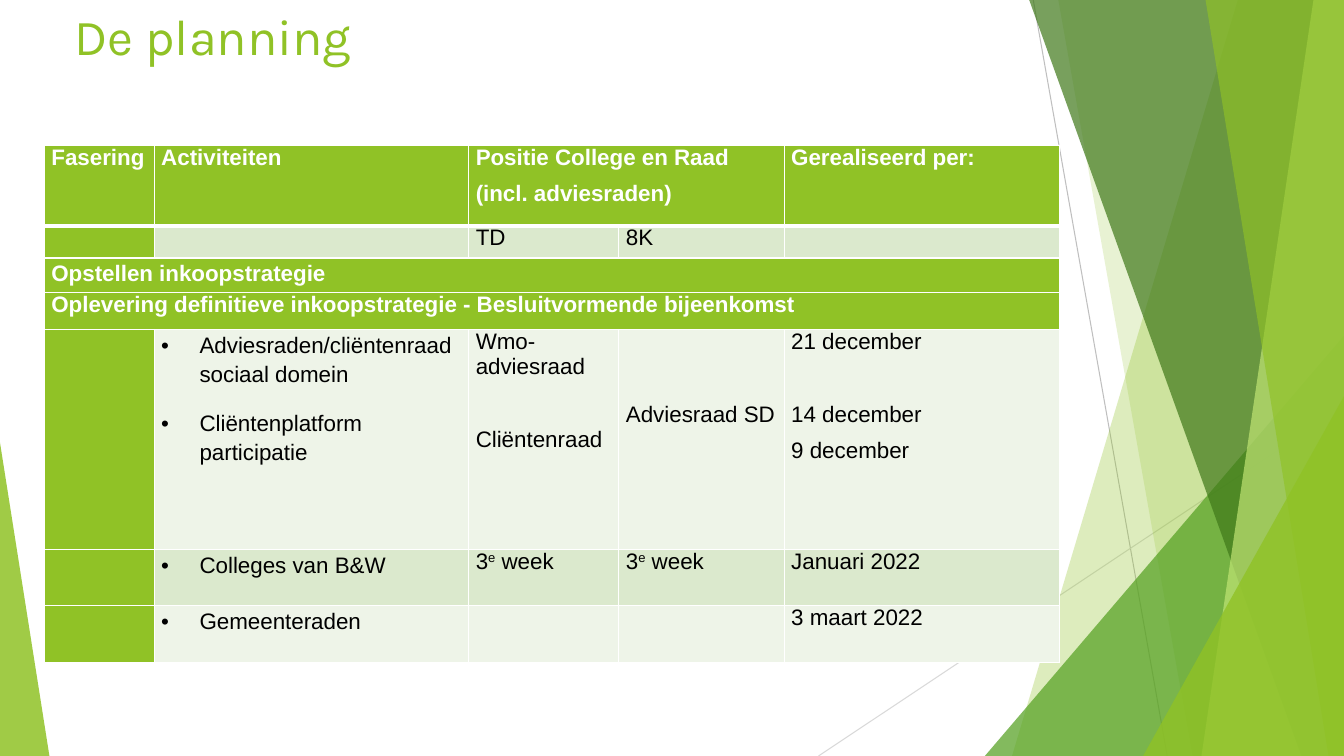
import lxml.etree
import pptx
import pptx.dml.color
import pptx.enum.shapes
import pptx.enum.text
import pptx.oxml.ns
import pptx.util

COLORS = {"lime": "90C226", "green": "54A021", "dark": "3F7819", "pale": "C0E474",
          "band": "DBE9CD", "light": "EEF4E8", "white": "FFFFFF", "black": "000000",
          "gray": "BFBFBF", "mist": "D9D9D9"}
WIDE, HIGH = pptx.util.Inches(13.333), pptx.util.Inches(7.5)
EMPTY = ()


def place(left, top, width, height):
    """Turn percentages of the slide into a box."""
    return [int(WIDE * left / 100), int(HIGH * top / 100),
            int(WIDE * width / 100), int(HIGH * height / 100)]


def color(name):
    return pptx.dml.color.RGBColor.from_string(COLORS[name])


def add(node, tag, **attrs):
    return lxml.etree.SubElement(node, pptx.oxml.ns.qn(tag), **attrs)


def paint(shape, name, alpha):
    shape.shadow.inherit = False
    shape.fill.solid()
    shape.fill.fore_color.rgb = color(name)
    shape.line.fill.background()
    tint = shape.fill._xPr.find(".//" + pptx.oxml.ns.qn("a:srgbClr"))
    add(tint, "a:alpha", val=str(alpha * 1000))


def draw_line(slide, box, start, end, name):
    left, top, width, height = box
    (x1, y1), (x2, y2) = [(int(left + width * x / 100), int(top + height * y / 100))
                          for x, y in (start, end)]
    line = slide.shapes.add_connector(
        pptx.enum.shapes.MSO_CONNECTOR.STRAIGHT, x1, y1, x2, y2)
    line.line.color.rgb = color(name)
    line.line.width = pptx.util.Pt(0.75)
    add(line._element.spPr, "a:effectLst")


def draw_shard(slide, box, high, low, name, alpha):
    """A band from two points on the left to the right edge of the box."""
    left, top, width, height = box
    right, base = left + width, top + height
    build = slide.shapes.build_freeform(int(left + width * high / 100), top)
    build.add_line_segments([(right, top), (right, base),
                             (int(left + width * low / 100), base)])
    paint(build.convert_to_shape(), name, alpha)


def draw_wedge(slide, box, left, top, width, apex, name, alpha):
    """A triangle standing on the bottom of the box."""
    x, y, wide, high = box
    shape = slide.shapes.add_shape(
        pptx.enum.shapes.MSO_SHAPE.ISOSCELES_TRIANGLE,
        int(x + wide * left / 100), int(y + high * top / 100),
        int(wide * width / 100), int(high * (100 - top) / 100))
    shape.adjustments[0] = apex
    paint(shape, name, alpha)


def draw_decor(slide, box):
    draw_line(slide, box, (76.88, 0), (86.85, 100), "gray")
    draw_line(slide, box, (100, 53.73), (60.9, 100), "mist")
    draw_shard(slide, box, 92.1, 75.3, "lime", 30)
    draw_shard(slide, box, 78.75, 88.73, "lime", 20)
    draw_wedge(slide, box, 73.28, 44.4, 26.72, 1, "green", 72)
    for high, low, name, alpha in ((76.58, 96.83, "dark", 70),
                                   (97.73, 89.4, "pale", 70),
                                   (89.7, 98.85, "lime", 65)):
        draw_shard(slide, box, high, low, name, alpha)
    draw_wedge(slide, box, 85.05, 52.4, 14.95, 1, "lime", 80)
    draw_wedge(slide, box, 0, 58.53, 3.68, 0, "lime", 85)


def draw_title(slide, box):
    frame = slide.shapes.add_textbox(*box).text_frame
    frame.word_wrap = True
    frame.vertical_anchor = pptx.enum.text.MSO_ANCHOR.TOP
    para = frame.paragraphs[0]
    para.text = "De planning"
    para.font.name, para.font.size = "Karla", pptx.util.Pt(36)
    para.font.color.rgb = color("lime")


# Paragraph looks: space before, space after, line spacing, bullet
PLAIN = (8, 0, 1, False)
GAP = (34, 0, 1, False)
STEP = (3, 3, 1.15, False)
GOAL = (3, 3, 1, False)
ITEM = (5, 10, 1.15, True)
WEEK = ((("3", "e", " week"), PLAIN),)


def say(text, look=PLAIN):
    return ((text,), look),


COLS = (1.09, 3.12, 1.49, 1.64, 2.73)
ROWS = (0.8, 0.32, 0.34, 0.37, 2.18, 0.56, 0.56)
CELLS = (
    (say("Fasering"), say("Activiteiten"),
     say("Positie College en Raad") + say("(incl. adviesraden)"), EMPTY,
     say("Gerealiseerd per:")),
    (EMPTY, EMPTY, say("TD"), say("8K"), EMPTY),
    (say("Opstellen inkoopstrategie", STEP),) + (EMPTY,) * 4,
    (say("Oplevering definitieve inkoopstrategie - Besluitvormende bijeenkomst", GOAL),)
    + (EMPTY,) * 4,
    (EMPTY,
     say("Adviesraden/cliëntenraad sociaal domein", ITEM)
     + say("Cliëntenplatform participatie", ITEM),
     say("Wmo-adviesraad") + say("Cliëntenraad", GAP),
     say("Adviesraad SD"),
     say("21 december") + say("14 december", GAP) + say("9 december")),
    (EMPTY, say("Colleges van B&W", ITEM), WEEK, WEEK, say("Januari 2022")),
    (EMPTY, say("Gemeenteraden", ITEM), EMPTY, EMPTY, say("3 maart 2022")),
)
HEADS = (0, 2, 3)


def fill_para(para, parts, look, head):
    before, after, lines, bullet = look
    para.space_before, para.space_after = pptx.util.Pt(before), pptx.util.Pt(after)
    para.line_spacing = lines
    if bullet:
        props = para._p.get_or_add_pPr()
        props.set("marL", str(pptx.util.Inches(0.38)))
        props.set("indent", str(-pptx.util.Inches(0.38)))
        add(props, "a:buFont", typeface="Arial")
        add(props, "a:buChar", char="•")
    para.font.name, para.font.size = "Arial", pptx.util.Pt(16)
    para.font.bold = head
    para.font.color.rgb = color("white" if head else "black")
    for i, part in enumerate(parts):
        run = para.add_run()
        run.text = part
        if i == 1:
            run._r.get_or_add_rPr().set("baseline", "30000")
    if not parts:
        add(para._p, "a:endParaRPr", sz="1600")


def edge_cell(cell, base):
    props = cell._tc.get_or_add_tcPr()
    for i, side in enumerate(("a:lnL", "a:lnR", "a:lnT", "a:lnB")):
        points = base if side == "a:lnB" else 1
        line = lxml.etree.Element(pptx.oxml.ns.qn(side), w=str(pptx.util.Pt(points)))
        add(add(line, "a:solidFill"), "a:srgbClr", val=COLORS["white"])
        props.insert(i, line)


def fill_cell(cell, paras, fill, head, base):
    cell.margin_left = cell.margin_right = pptx.util.Inches(0.07)
    cell.margin_top = cell.margin_bottom = 0
    cell.fill.solid()
    cell.fill.fore_color.rgb = color(fill)
    edge_cell(cell, base)
    frame = cell.text_frame
    for i, (parts, look) in enumerate(paras or (((), PLAIN),)):
        para = frame.add_paragraph() if i else frame.paragraphs[0]
        fill_para(para, parts, look, head)


def draw_table(slide, box):
    table = slide.shapes.add_table(len(ROWS), len(COLS), *box).table
    table.first_row = table.horz_banding = False
    for col, share in zip(table.columns, COLS):
        col.width = int(box[2] * share / sum(COLS))
    for row, share in zip(table.rows, ROWS):
        row.height = int(box[3] * share / sum(ROWS))
    for r, row in enumerate(CELLS):
        head = r in HEADS
        for c, paras in enumerate(row):
            fill = "lime" if head or c == 0 else "band" if r % 2 else "light"
            fill_cell(table.cell(r, c), paras, fill, head, 1 if r else 3)
    # The second adviser stands level with the second date
    table.cell(4, 3).margin_top = pptx.util.Inches(0.72)
    table.cell(0, 2).merge(table.cell(0, 3))
    for r in HEADS[1:]:
        table.cell(r, 0).merge(table.cell(r, 4))


def main():
    deck = pptx.Presentation()
    deck.slide_width, deck.slide_height = WIDE, HIGH
    slide = deck.slides.add_slide(deck.slide_layouts[6])
    draw_decor(slide, place(0, 0, 100, 100))
    draw_title(slide, place(4.8, 0, 70.5, 19.2))
    draw_table(slide, place(3.3, 19.2, 75.53, 68.4))
    deck.save("out.pptx")


if __name__ == "__main__":
    main()
